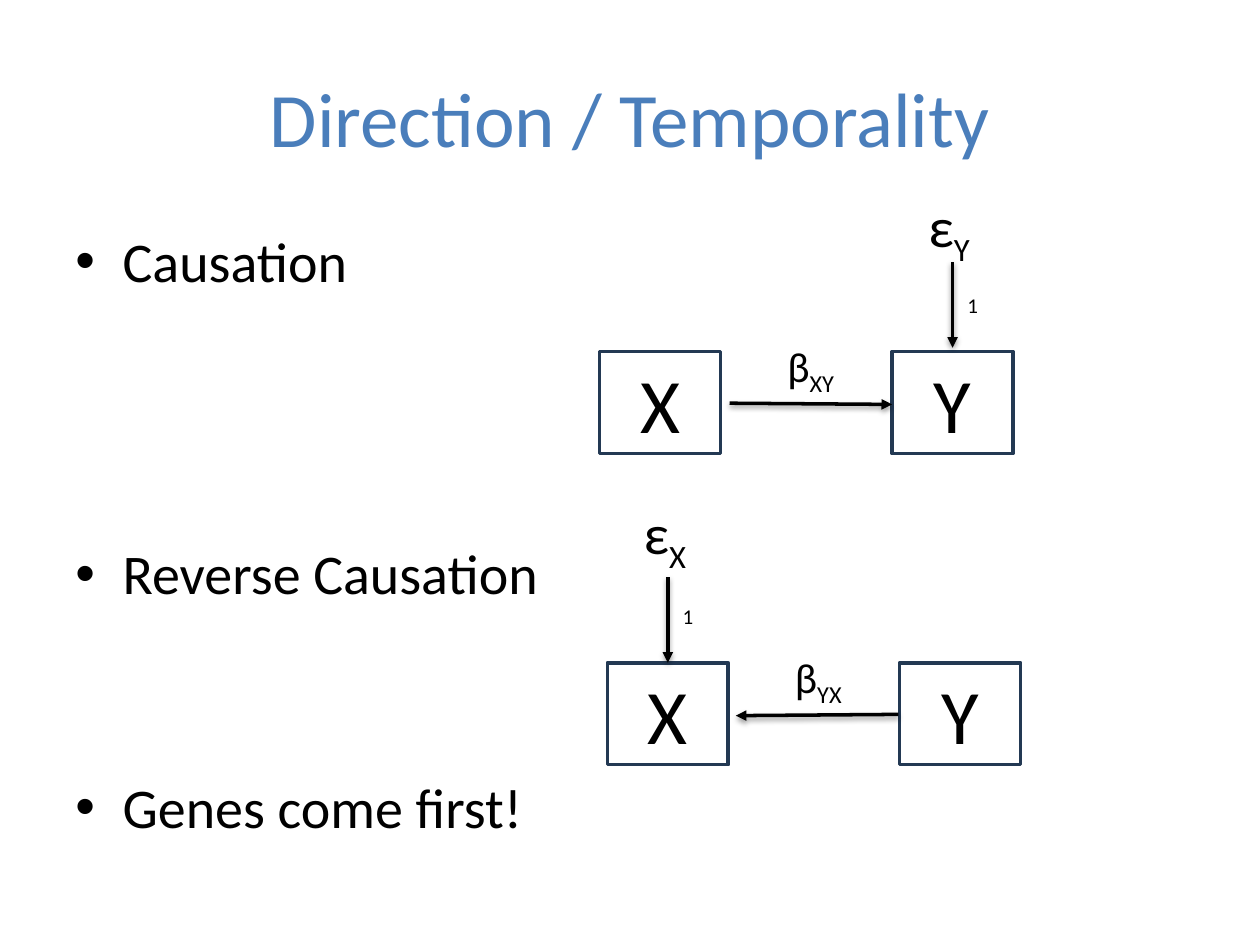
import pptx
import pptx.dml.color
import pptx.enum.shapes
import pptx.enum.text
import pptx.oxml
import pptx.oxml.ns
import pptx.util

THEME = {
    "font": "Calibri",
    "title": "4A7EBB", "ink": "000000", "frame": "233953", "shadow": "000000",
    "heading": 44, "body": 32, "path": 24, "weight": 12, "line": 2,
}
ALIGN = pptx.enum.text.PP_ALIGN
ANCHOR = pptx.enum.text.MSO_ANCHOR
color = pptx.dml.color.RGBColor.from_string

deck = pptx.Presentation()
deck.slide_width = pptx.util.Inches(10)
deck.slide_height = pptx.util.Inches(7.5)
page = deck.slides.add_slide(deck.slide_layouts[6])


def grid(*cells):
    """Turn cells of a 100 x 75 grid into slide lengths."""
    return [round(deck.slide_width * cell / 100) for cell in cells]


def write(para, text, size, ink=THEME["ink"], subscript=""):
    for part in filter(None, (text, subscript)):
        span = para.add_run()
        span.text = part
        span.font.name = THEME["font"]
        span.font.size = pptx.util.Pt(size)
        span.font.color.rgb = color(ink)
    if subscript:
        span.font._element.set("baseline", "-25000")


# Title
box = page.shapes.add_textbox(*grid(5, 3, 90, 12.5))
box.text_frame.word_wrap = True
box.text_frame.vertical_anchor = ANCHOR.MIDDLE
para = box.text_frame.paragraphs[0]
para.alignment = ALIGN.CENTER
write(para, "Direction / Temporality", THEME["heading"], THEME["title"])

# Bullets, spaced to sit beside their diagrams
bullets = [("Causation", 2), ("Reverse Causation", 140), ("Genes come first!", 95)]
box = page.shapes.add_textbox(*grid(5, 17.5, 90, 54.5))
box.text_frame.word_wrap = True
for index, (text, gap) in enumerate(bullets):
    para = box.text_frame.paragraphs[0] if index == 0 else box.text_frame.add_paragraph()
    para.space_before = pptx.util.Pt(gap)
    write(para, text, THEME["body"])
    properties = para._p.get_or_add_pPr()
    indent = grid(3.75)[0]
    properties.set("marL", str(indent))
    properties.set("indent", str(-indent))
    namespace = pptx.oxml.ns.nsdecls("a")
    properties.append(pptx.oxml.parse_xml(f'<a:buFont {namespace} typeface="Arial"/>'))
    properties.append(pptx.oxml.parse_xml(f'<a:buChar {namespace} char="•"/>'))

# Path diagrams: corner of the X box, then the error term's box and offsets
box_width, box_height, box_step = 9.6, 8.1, 23.2
diagrams = [
    {"left": 47.6, "top": 27.9, "cause": "X", "effect": "Y",
     "path": (10.3, 4.1, 23.2, 4.2), "error_top": -13.2, "error_arrow": (-7.1, -0.3)},
    {"left": 48.2, "top": 52.6, "cause": "Y", "effect": "X",
     "path": (23.1, 4.1, 10.2, 4.2), "error_top": -13.5, "error_arrow": (-6.8, 0)},
]
for diagram in diagrams:
    left, top = diagram["left"], diagram["top"]
    cause, effect = diagram["cause"], diagram["effect"]
    box_left = {"X": left, "Y": left + box_step}

    # Variables
    for name, start in box_left.items():
        box = page.shapes.add_shape(
            pptx.enum.shapes.MSO_SHAPE.RECTANGLE, *grid(start, top, box_width, box_height))
        box.shadow.inherit = False
        box.fill.background()
        box.line.color.rgb = color(THEME["frame"])
        box.line.width = pptx.util.Pt(THEME["line"])
        frame = box.text_frame
        frame.margin_top = frame.margin_bottom = 0
        frame.vertical_anchor = ANCHOR.MIDDLE
        frame.paragraphs[0].alignment = ALIGN.CENTER
        write(frame.paragraphs[0], name, THEME["heading"])

    # Causal arrow and error arrow
    x1, y1, x2, y2 = diagram["path"]
    middle = box_left[effect] + box_width / 2
    error_start, error_end = diagram["error_arrow"]
    for ends in [(left + x1, top + y1, left + x2, top + y2),
                 (middle, top + error_start, middle, top + error_end)]:
        arrow = page.shapes.add_connector(
            pptx.enum.shapes.MSO_CONNECTOR.STRAIGHT, *grid(*ends))
        arrow.line.color.rgb = color(THEME["ink"])
        arrow.line.width = pptx.util.Pt(THEME["line"])
        namespace = pptx.oxml.ns.nsdecls("a")
        arrow.line._get_or_add_ln().append(
            pptx.oxml.parse_xml(f'<a:tailEnd {namespace} type="triangle"/>'))
        blur, distance = pptx.util.Pt(3.1), pptx.util.Pt(1.6)
        arrow._element.spPr.append(pptx.oxml.parse_xml(
            f'<a:effectLst {namespace}><a:outerShdw blurRad="{blur}" dist="{distance}" '
            f'dir="5400000" rotWithShape="0"><a:srgbClr val="{THEME["shadow"]}">'
            '<a:alpha val="38000"/></a:srgbClr></a:outerShdw></a:effectLst>'))

    # Error term, path coefficient and fixed weight
    labels = [
        ("ε", effect, THEME["body"], box_left[effect] + 1.9, diagram["error_top"], 5.6, 6.4),
        ("β", cause + effect, THEME["path"], left + 13.9, -1.4, 6.1, 5),
        ("1", "", THEME["weight"], box_left[effect] + 5, -5.2, 2.9, 3),
    ]
    for text, subscript, size, start, offset, width, height in labels:
        box = page.shapes.add_textbox(*grid(start, top + offset, width, height))
        box.text_frame.word_wrap = False
        write(box.text_frame.paragraphs[0], text, size, subscript=subscript)

deck.save("out.pptx")
